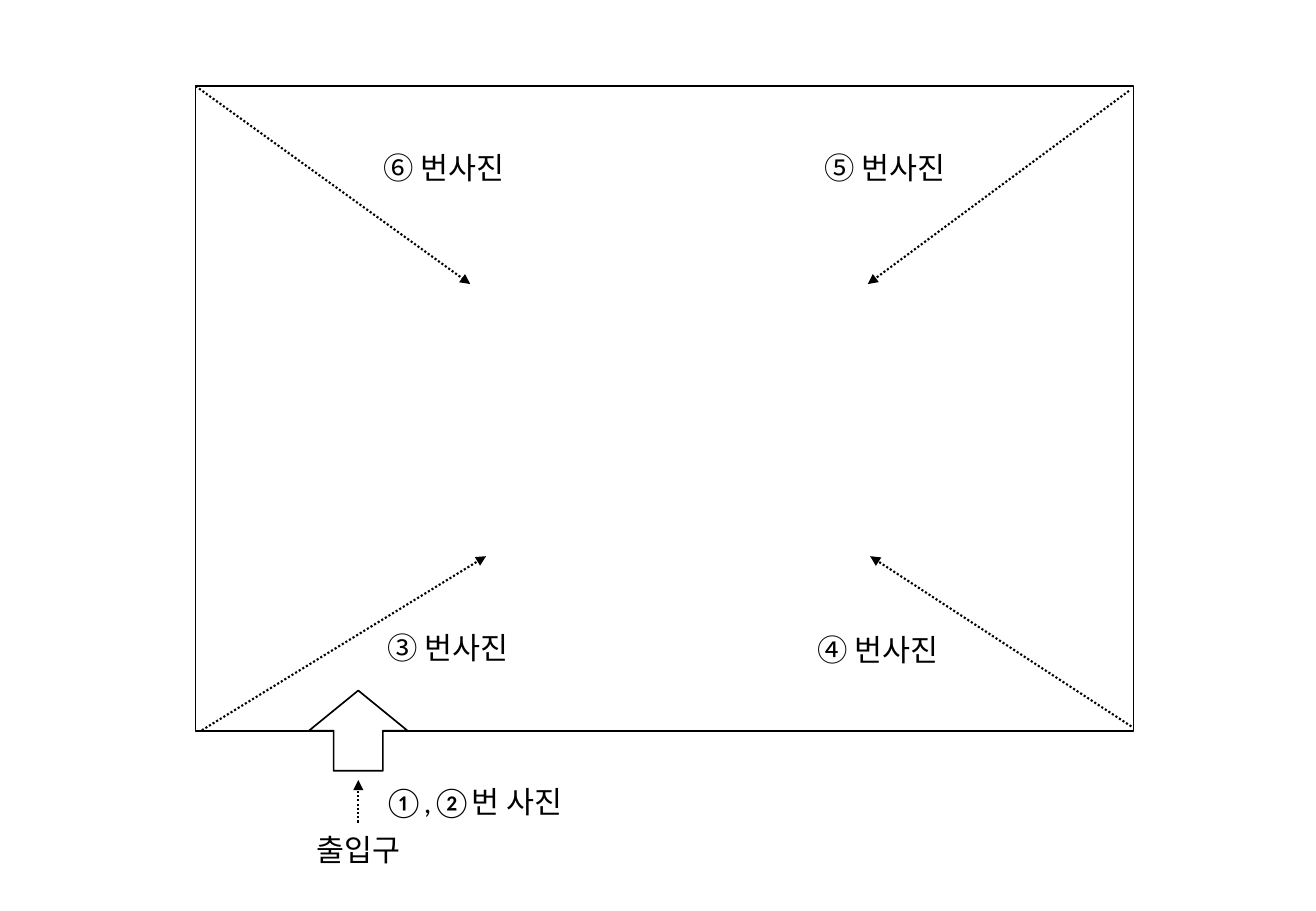
from pptx import Presentation
from pptx.dml.color import RGBColor
from pptx.enum.dml import MSO_LINE
from pptx.enum.shapes import MSO_CONNECTOR, MSO_SHAPE
from pptx.enum.text import MSO_AUTO_SIZE, PP_ALIGN
from pptx.oxml.ns import qn
from pptx.util import Cm, Pt
from lxml.etree import SubElement


def rgb(value):
    return RGBColor.from_string(value)


prs = Presentation()
prs.slide_width, prs.slide_height = Cm(27.51), Cm(19.05)
s = prs.slides.add_slide(prs.slide_layouts[6])

# Room outline
room = s.shapes.add_shape(MSO_SHAPE.RECTANGLE, Cm(4.09), Cm(1.8), Cm(19.61), Cm(13.49))
room.fill.background()

# Camera directions: from x, y, to x, y
directions = [
    (7.49, 17.2, 7.49, 16.31),
    (4.09, 1.8, 9.83, 5.94),
    (23.6, 1.9, 18.14, 5.94),
    (23.65, 15.19, 18.19, 11.63),
    (4.22, 15.27, 10.16, 11.63),
]
for points in directions:
    line = s.shapes.add_connector(MSO_CONNECTOR.STRAIGHT, *[Cm(v) for v in points])
    line.line.color.rgb = rgb("000000")
    line.line.width = Pt(1.25)
    line.line.dash_style = MSO_LINE.ROUND_DOT
    SubElement(line.line._get_or_add_ln(), qn("a:tailEnd"), type="triangle")
    SubElement(line._element.spPr, qn("a:effectLst"))

# Labels: text, left, top, width, alignment, wrap
labels = [
    ("출입구", 6.27, 17.25, 2.44, PP_ALIGN.CENTER, False),
    ("①,②번 사진", 7.77, 16.26, 4.47, PP_ALIGN.LEFT, True),
    ("③ 번사진", 7.85, 13.03, 3.23, PP_ALIGN.LEFT, False),
    ("④ 번사진", 16.84, 13.08, 3.23, PP_ALIGN.LEFT, False),
    ("⑤ 번사진", 16.99, 3, 3.23, PP_ALIGN.LEFT, False),
    ("⑥ 번사진", 7.77, 3, 3.23, PP_ALIGN.LEFT, False),
]
for text, left, top, width, align, wrap in labels:
    tf = s.shapes.add_textbox(Cm(left), Cm(top), Cm(width), Cm(1.02)).text_frame
    tf.word_wrap = wrap
    tf.auto_size = MSO_AUTO_SIZE.SHAPE_TO_FIT_TEXT
    p = tf.paragraphs[0]
    p.alignment = align
    r = p.add_run()
    r.text = text
    r.font.name = "Calibri"
    r.font.size = Pt(18)
    r.font.color.rgb = rgb("000000")

# Entrance
entrance = s.shapes.add_shape(MSO_SHAPE.UP_ARROW, Cm(6.46), Cm(14.44), Cm(2.06), Cm(1.68))
entrance.fill.solid()
entrance.fill.fore_color.rgb = rgb("FFFFFF")

for sp in (room, entrance):
    sp.shadow.inherit = False
    sp.line.color.rgb = rgb("000000")
    sp.line.width = Pt(1)

prs.save("out.pptx")
